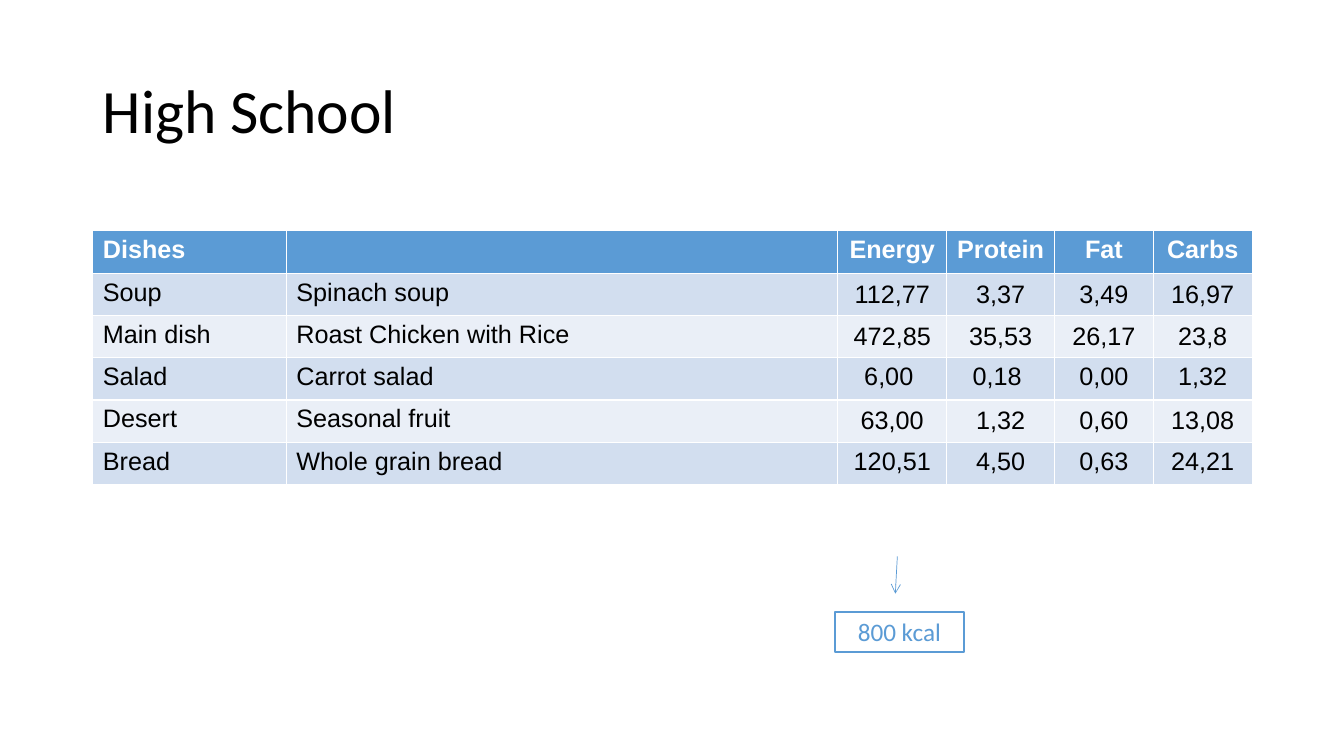
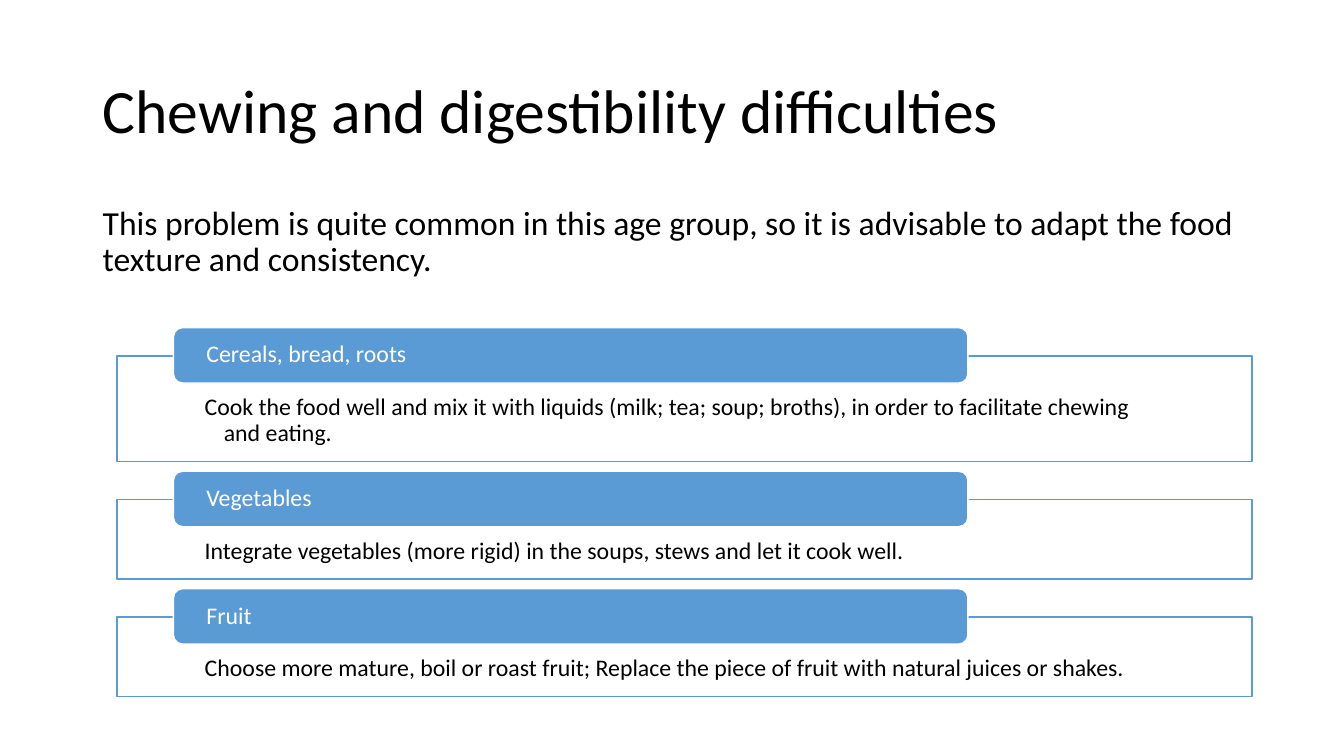
from lxml import etree
from pptx import Presentation
from pptx.dml.color import RGBColor
from pptx.enum.shapes import MSO_CONNECTOR, MSO_SHAPE
from pptx.enum.text import MSO_ANCHOR, PP_ALIGN
from pptx.oxml.ns import qn
from pptx.util import Inches, Pt

TOP, MIDDLE = MSO_ANCHOR.TOP, MSO_ANCHOR.MIDDLE
LEFT, CENTER = PP_ALIGN.LEFT, PP_ALIGN.CENTER
RECT, ROUNDED = MSO_SHAPE.RECTANGLE, MSO_SHAPE.ROUNDED_RECTANGLE
STRAIGHT = MSO_CONNECTOR.STRAIGHT

BLUE = RGBColor(0x5B, 0x9B, 0xD5)
BAND_DARK = RGBColor(0xD2, 0xDE, 0xEF)
BAND_LIGHT = RGBColor(0xEA, 0xEF, 0xF7)
WHITE = RGBColor(0xFF, 0xFF, 0xFF)
BLACK = RGBColor(0x00, 0x00, 0x00)
BODY_FONT, TABLE_FONT = "Calibri", "Arial"
INSETS = (0.1, 0.05, 0.1, 0.05)
TIGHT_INSETS = (0.07, 0, 0.07, 0)
MARGIN, CONTENT_WIDTH = 0.92, 11.5

MENU_TITLE = "High School"
MENU_COLUMNS = [1.92, 5.47, 1.08, 1.07, 0.98, 0.98]
MENU_ROW_HEIGHT = 0.42
MENU = [
    ["Dishes", "", "Energy", "Protein", "Fat", "Carbs"],
    ["Soup", "Spinach soup", "112,77", "3,37", "3,49", "16,97"],
    ["Main dish", "Roast Chicken with Rice", "472,85", "35,53", "26,17", "23,8"],
    ["Salad", "Carrot salad", "6,00 ", "0,18 ", "0,00", "1,32"],
    ["Desert", "Seasonal fruit", "63,00", "1,32", "0,60", "13,08"],
    ["Bread", "Whole grain bread", "120,51", "4,50", "0,63", "24,21"],
]
CENTERED_DISHES = {"Soup", "Main dish", "Desert"}
ENERGY_TOTAL = "800 kcal"

ADVICE_TITLE = "Chewing and digestibility difficulties"
ADVICE_INTRO = ("This problem is quite common in this age group, so it is advisable "
                "to adapt the food texture and consistency.")
ADVICE = [
    ("Cereals, bread, roots", 1.05,
     "Cook the food well and mix it with liquids (milk; tea; soup; broths), "
     "in order to facilitate chewing and eating."),
    ("Vegetables", 0.79,
     "Integrate vegetables (more rigid) in the soups, stews and let it cook well."),
    ("Fruit", 0.79,
     "Choose more mature, boil or roast fruit; Replace the piece of fruit "
     "with natural juices or shakes."),
]
PANEL_LEFT, PANEL_TOP, PANEL_WIDTH, PANEL_GAP = 1.16, 3.53, 11.26, 0.375
TAB_LEFT, TAB_RISE, TAB_WIDTH, TAB_HEIGHT = 1.72, 0.28, 7.88, 0.55


def write(p, text, size, color, font=BODY_FONT, bold=False, align=LEFT, spacing=0.9):
    p.alignment = align
    p.line_spacing = spacing
    r = p.add_run()
    r.text = text
    r.font.size = Pt(size)
    r.font.name = font
    r.font.bold = bold
    r.font.color.rgb = color


def set_insets(target, insets, anchor):
    target.margin_left, target.margin_top, target.margin_right, target.margin_bottom = map(
        Inches, insets)
    target.vertical_anchor = anchor


def add_text(s, box, text, size, anchor=TOP):
    tf = s.shapes.add_textbox(*map(Inches, box)).text_frame
    tf.word_wrap = True
    set_insets(tf, INSETS, anchor)
    p = tf.paragraphs[0]
    write(p, text, size, BLACK)
    return p


def add_box(s, kind, box, fill, line, insets=INSETS, anchor=TOP):
    sp = s.shapes.add_shape(kind, *map(Inches, box))
    sp.shadow.inherit = False
    sp.fill.solid()
    sp.fill.fore_color.rgb = fill
    sp.line.color.rgb = line
    sp.line.width = Pt(1)
    tf = sp.text_frame
    tf.word_wrap = True
    set_insets(tf, insets, anchor)
    return tf.paragraphs[0]


def add_arrow(s, start, end):
    cn = s.shapes.add_connector(STRAIGHT, *map(Inches, start + end))
    cn.line.color.rgb = BLUE
    cn.line.width = Pt(0.5)
    etree.SubElement(cn.line._get_or_add_ln(), qn("a:tailEnd"), type="arrow")
    etree.SubElement(cn._element.spPr, qn("a:effectLst"))


def add_slide(prs, title):
    s = prs.slides.add_slide(prs.slide_layouts[6])
    add_text(s, (MARGIN, 0.4, CONTENT_WIDTH, 1.45), title, 44, MIDDLE)
    return s


def add_menu(s):
    table = s.shapes.add_table(
        len(MENU), len(MENU_COLUMNS), Inches(MARGIN), Inches(2.29),
        Inches(CONTENT_WIDTH), Inches(MENU_ROW_HEIGHT * len(MENU))).table
    for column, width in zip(table.columns, MENU_COLUMNS):
        column.width = Inches(width)
    for i, values in enumerate(MENU):
        table.rows[i].height = Inches(MENU_ROW_HEIGHT)
        header = i == 0
        fill = BLUE if header else BAND_DARK if i % 2 else BAND_LIGHT
        for j, value in enumerate(values):
            cell = table.cell(i, j)
            cell.fill.solid()
            cell.fill.fore_color.rgb = fill
            numeric = j > 1
            if numeric and values[0] in CENTERED_DISHES:
                set_insets(cell, TIGHT_INSETS, MIDDLE)
            else:
                set_insets(cell, INSETS, TOP)
            if value:
                write(cell.text_frame.paragraphs[0], value, 18,
                      WHITE if header else BLACK, TABLE_FONT, header,
                      CENTER if numeric else LEFT, 1.0)


def build_menu_slide(prs):
    s = add_slide(prs, MENU_TITLE)
    add_menu(s)
    add_arrow(s, (8.9, 5.52), (8.88, 5.89))
    p = add_box(s, RECT, (8.28, 6.07, 1.28, 0.4), WHITE, BLUE)
    write(p, ENERGY_TOTAL, 18, BLUE, align=CENTER, spacing=1.0)


def build_advice_slide(prs):
    s = add_slide(prs, ADVICE_TITLE)
    p = add_text(s, (MARGIN, 2, CONTENT_WIDTH, 1), ADVICE_INTRO, 24)
    p.space_before = Pt(10)
    top = PANEL_TOP
    for heading, height, advice in ADVICE:
        p = add_box(s, RECT, (PANEL_LEFT, top, PANEL_WIDTH, height), WHITE, BLUE,
                    (0.87, 0.39, 0.87, 0.13))
        write(p, advice, 17, BLACK)
        pPr = p._p.get_or_add_pPr()
        pPr.set("marL", str(Inches(0.19)))
        pPr.set("indent", str(-Inches(0.19)))
        p = add_box(s, ROUNDED, (TAB_LEFT, top - TAB_RISE, TAB_WIDTH, TAB_HEIGHT),
                    BLUE, WHITE, (0.3, 0, 0.3, 0), MIDDLE)
        write(p, heading, 17, WHITE)
        top += height + PANEL_GAP


def main():
    prs = Presentation()
    prs.slide_width, prs.slide_height = Inches(13.33), Inches(7.5)
    build_menu_slide(prs)
    build_advice_slide(prs)
    prs.save("out.pptx")


if __name__ == "__main__":
    main()
